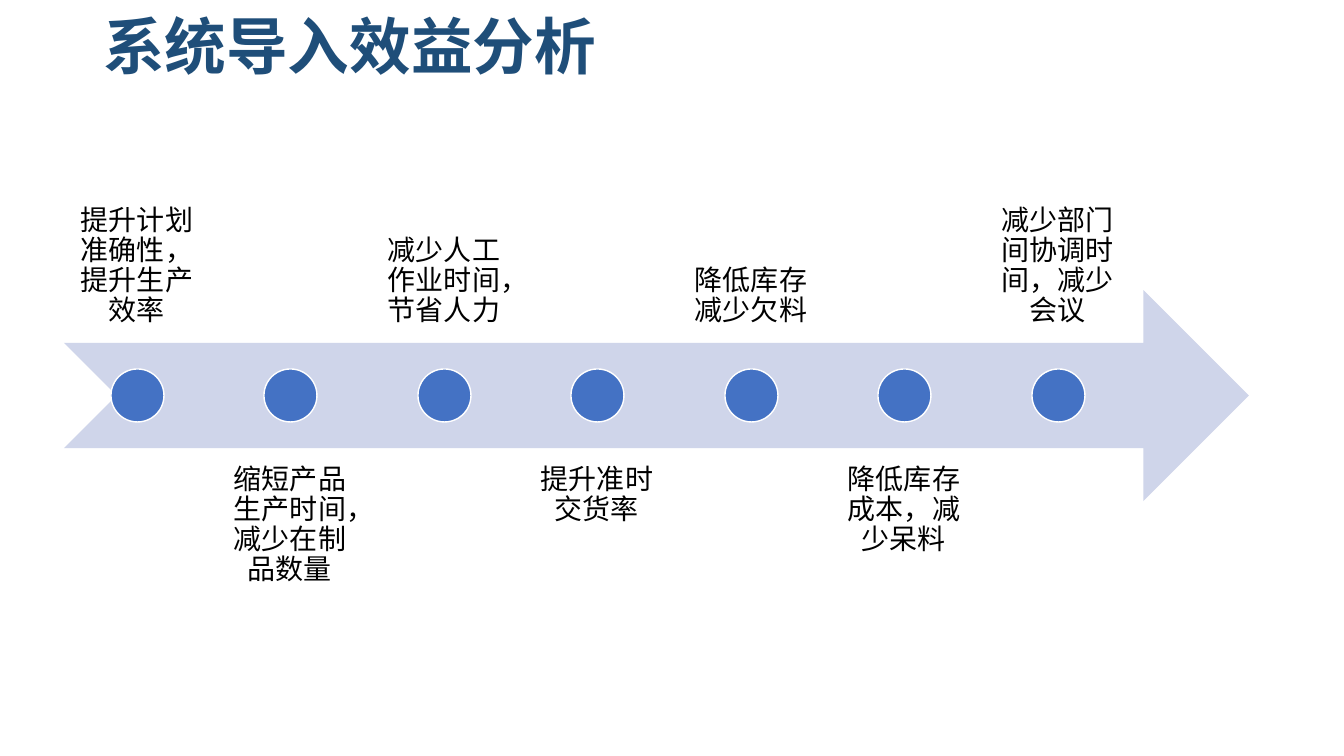
from lxml import etree
from pptx import Presentation
from pptx.dml.color import RGBColor
from pptx.enum.shapes import MSO_SHAPE
from pptx.enum.text import MSO_ANCHOR, MSO_AUTO_SIZE, PP_ALIGN
from pptx.oxml.ns import qn
from pptx.util import Pt

ARROW, DOT = MSO_SHAPE.NOTCHED_RIGHT_ARROW, MSO_SHAPE.OVAL
TOP, MIDDLE, BOTTOM = MSO_ANCHOR.TOP, MSO_ANCHOR.MIDDLE, MSO_ANCHOR.BOTTOM
LEFT, CENTER = PP_ALIGN.LEFT, PP_ALIGN.CENTER
NO_FIT = MSO_AUTO_SIZE.NONE

BENEFITS = [
    "提升计划准确性，提升生产效率",
    "缩短产品生产时间，减少在制品数量",
    "减少人工作业时间，节省人力",
    "提升准时交货率",
    "降低库存减少欠料",
    "降低库存成本，减少呆料",
    "减少部门间协调时间，减少会议",
]


def px(n):
    return round(n * 914400 / 100.8)


def rgb(value):
    return RGBColor.from_string(value)


class Deck:
    font = "Noto Sans CJK SC"
    navy, blue, pale = "1F4E79", "4472C4", "CFD5EA"
    black, white = "000000", "FFFFFF"

    def __init__(self):
        self.prs = Presentation()
        self.prs.slide_width, self.prs.slide_height = px(1344), px(756)
        self.s = self.prs.slides.add_slide(self.prs.slide_layouts[5])

    def set_text(self, tf, text, size, color, align, anchor, bold=False):
        tf.word_wrap = True
        tf.auto_size = NO_FIT
        tf.vertical_anchor = anchor
        p = tf.paragraphs[0]
        p.alignment = align
        p.line_spacing = 0.9
        r = p.add_run()
        r.text = text
        r.font.size = Pt(size)
        r.font.bold = bold
        r.font.color.rgb = rgb(color)
        r.font.name = self.font
        latin = r.font._element.find(qn("a:latin"))
        ea = etree.Element(qn("a:ea"), typeface=self.font)
        latin.addnext(ea)

    def title(self, text, x, y, w, h):
        sp = self.s.shapes.title
        sp.left, sp.top, sp.width, sp.height = map(px, (x, y, w, h))
        self.set_text(sp.text_frame, text, 44, self.navy, LEFT, MIDDLE, True)

    def shape(self, kind, x, y, w, h, fill, line=None):
        sp = self.s.shapes.add_shape(kind, *map(px, (x, y, w, h)))
        sp.shadow.inherit = False
        sp.fill.solid()
        sp.fill.fore_color.rgb = rgb(fill)
        if line:
            sp.line.color.rgb = rgb(line)
            sp.line.width = Pt(1)
        else:
            sp.line.fill.background()

    def label(self, text, x, y, w, h, anchor):
        tf = self.s.shapes.add_textbox(*map(px, (x, y, w, h))).text_frame
        tf.margin_left = tf.margin_right = px(16)
        tf.margin_top = tf.margin_bottom = px(16)
        self.set_text(tf, text, 20, self.black, CENTER, anchor)


def main():
    d = Deck()
    d.title("系统导入效益分析", 93, 15, 1159, 69)
    d.shape(ARROW, 64, 290, 1185, 211, d.pale)
    span = 921
    for i, benefit in enumerate(BENEFITS):
        x = 64 + i * span // (len(BENEFITS) - 1)
        y, anchor = (449, TOP) if i % 2 else (132, BOTTOM)
        d.label(benefit, x, y, 146, 211, anchor)
        d.shape(DOT, x + 47, 369, 53, 53, d.blue, d.white)
    d.prs.save("out.pptx")


if __name__ == "__main__":
    main()
